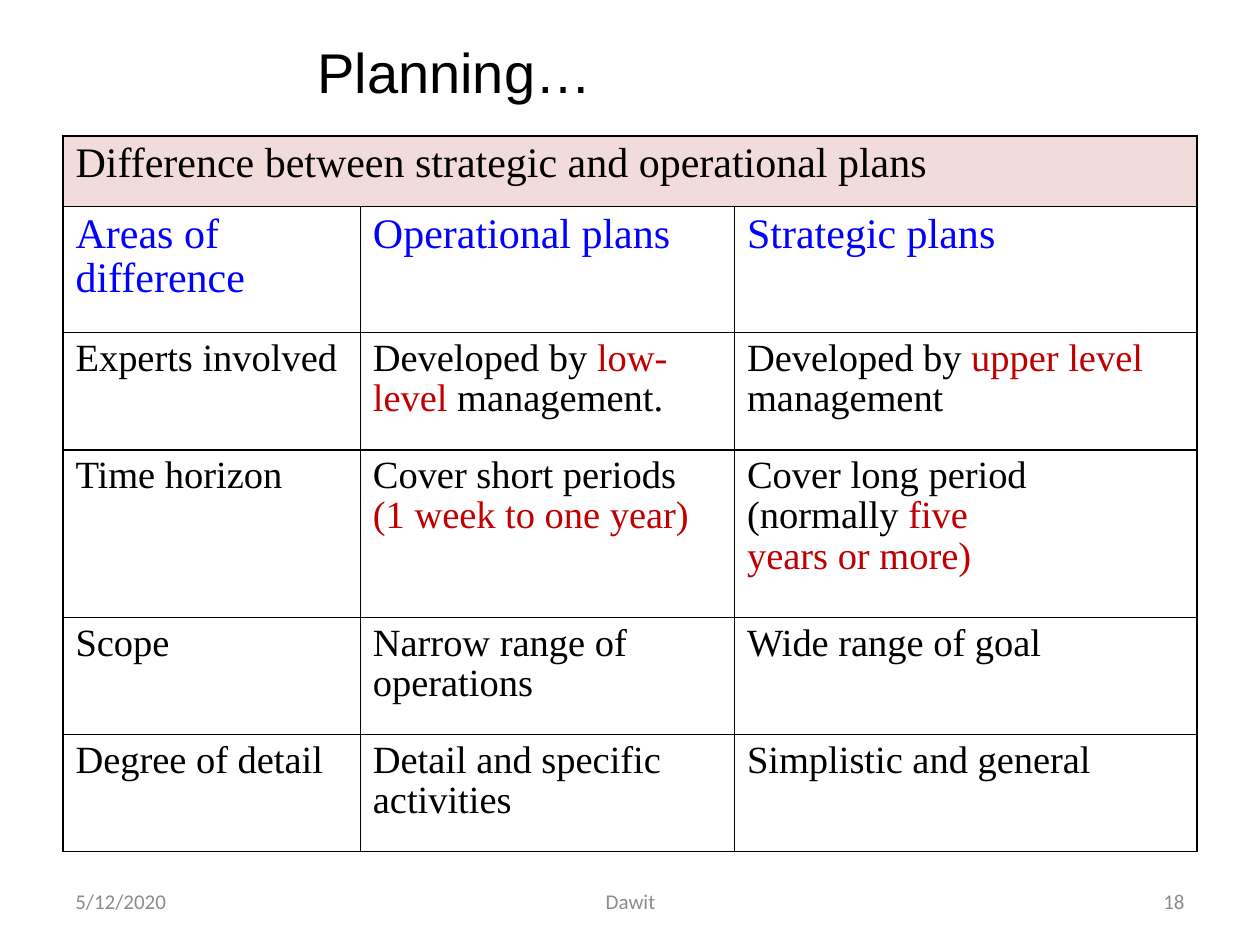
from lxml.etree import SubElement
from pptx import Presentation
from pptx.dml.color import RGBColor
from pptx.enum.text import MSO_ANCHOR as Anchor, PP_ALIGN as Align
from pptx.oxml.ns import qn
from pptx.util import Inches, Pt

BLACK, BLUE, RED, GREY = "000000", "0000FF", "C00000", "8C8C8C"


def color(value):
    return RGBColor.from_string(value)


def add_span(para, text, font, size, value):
    span = para.add_run()
    span.text = text
    span.font.name = font
    span.font.size = Pt(size)
    span.font.color.rgb = color(value)


deck = Presentation()
deck.slide_width, deck.slide_height = Inches(10), Inches(7.5)
page = deck.slides.add_slide(deck.slide_layouts[6])

column_widths = [2.36, 2.97, 3.67]
row_heights = [0.56, 1, 0.93, 1.33, 0.93, 0.93]
headings = ["Areas of difference", "Operational plans", "Strategic plans"]
rows = [
    [[[("Difference between strategic and operational plans", BLACK)]], [], []],
    [[[(heading, BLUE)]] for heading in headings],
    [
        [[("Experts involved", BLACK)]],
        [[("Developed by ", BLACK), ("low-level ", RED), ("management.", BLACK)]],
        [[("Developed by ", BLACK), ("upper level", RED)], [("management", BLACK)]],
    ],
    [
        [[("Time horizon", BLACK)]],
        [[("Cover short periods", BLACK)], [("(1 week to one year)", RED)]],
        [[("Cover long period (normally ", BLACK), ("five", RED)], [("years or more)", RED)]],
    ],
    [
        [[("Scope", BLACK)]],
        [[("Narrow range of operations", BLACK)]],
        [[("Wide range of goal", BLACK)]],
    ],
    [
        [[("Degree of detail", BLACK)]],
        [[("Detail and specific activities", BLACK)]],
        [[("Simplistic and general", BLACK)]],
    ],
]

table = page.shapes.add_table(
    len(rows), len(column_widths), Inches(0.5), Inches(1.08),
    Inches(sum(column_widths)), Inches(sum(row_heights))).table
for column, width in zip(table.columns, column_widths):
    column.width = Inches(width)
for row, height in zip(table.rows, row_heights):
    row.height = Inches(height)
table.cell(0, 0).merge(table.cell(0, 2))

for row_index, row in enumerate(rows):
    for column_index, paragraphs in enumerate(row):
        cell = table.cell(row_index, column_index)
        properties = cell._tc.get_or_add_tcPr()
        for side in ("a:lnL", "a:lnR", "a:lnT", "a:lnB"):
            border = SubElement(properties, qn(side), w=str(Pt(1)))
            border_fill = SubElement(border, qn("a:solidFill"))
            SubElement(border_fill, qn("a:srgbClr"), val=BLACK)
        cell.fill.solid()
        cell.fill.fore_color.rgb = color("FFFFFF" if row_index else "F2DCDB")
        for index, spans in enumerate(paragraphs):
            frame = cell.text_frame
            para = frame.add_paragraph() if index else frame.paragraphs[0]
            para.line_spacing = 0.95
            for text, value in spans:
                add_span(para, text, "Times New Roman", 24 if row_index < 2 else 22, value)

texts = [
    ("Planning…", 2.42, 0.25, 3.26, 0.64, "Arial", 32, BLACK, Align.LEFT, Anchor.TOP),
    ("5/12/2020", 0.5, 6.95, 2.33, 0.4, "Calibri", 12, GREY, Align.LEFT, Anchor.MIDDLE),
    ("Dawit", 3.42, 6.95, 3.17, 0.4, "Calibri", 12, GREY, Align.CENTER, Anchor.MIDDLE),
    ("18", 7.17, 6.95, 2.33, 0.4, "Calibri", 12, GREY, Align.RIGHT, Anchor.MIDDLE),
]
for text, left, top, width, height, font, size, value, align, anchor in texts:
    box = page.shapes.add_textbox(Inches(left), Inches(top), Inches(width), Inches(height))
    frame = box.text_frame
    frame.word_wrap = True
    frame.vertical_anchor = anchor
    para = frame.paragraphs[0]
    para.alignment = align
    add_span(para, text, font, size, value)

deck.save("out.pptx")
